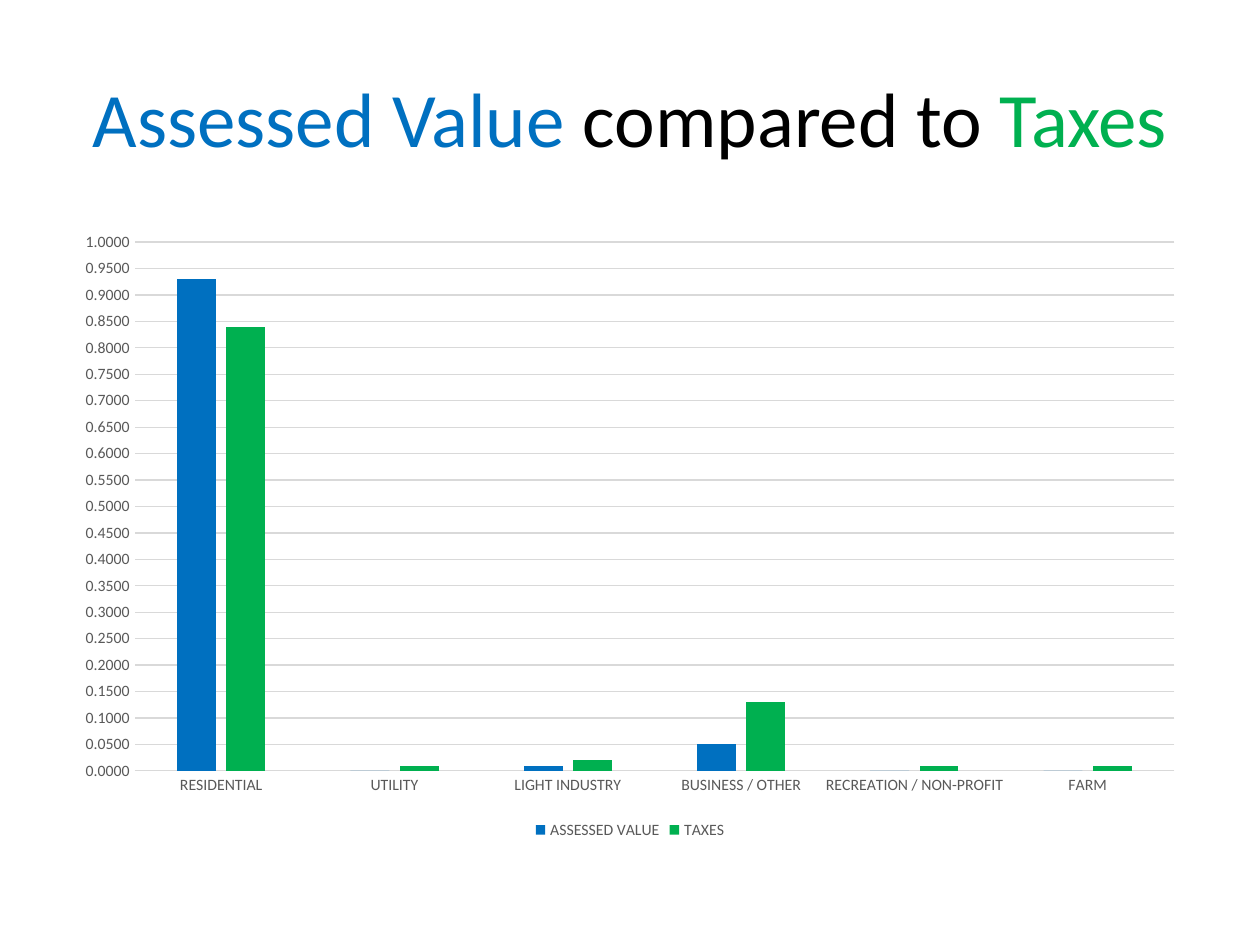
from dataclasses import dataclass

from pptx import Presentation
from pptx.chart.data import CategoryChartData
from pptx.dml.color import RGBColor
from pptx.enum.chart import XL_CHART_TYPE, XL_LEGEND_POSITION, XL_TICK_MARK
from pptx.enum.text import MSO_ANCHOR, PP_ALIGN
from pptx.util import Inches, Pt


@dataclass(frozen=True)
class Theme:
    font: str = "Calibri"
    value: RGBColor = RGBColor(0x00, 0x70, 0xC0)
    taxes: RGBColor = RGBColor(0x00, 0xB0, 0x50)
    text: RGBColor = RGBColor(0x00, 0x00, 0x00)
    label: RGBColor = RGBColor(0x59, 0x59, 0x59)
    grid: RGBColor = RGBColor(0xD9, 0xD9, 0xD9)
    title_size: Pt = Pt(44)
    chart_size: Pt = Pt(10)
    label_size: Pt = Pt(9)
    rule: Pt = Pt(0.75)


THEME = Theme()
WIDTH, HEIGHT = Inches(10), Inches(7.5)

TITLE_BOX = (0.05, 0.04, 0.9, 1 / 6)
CHART_BOX = (0.05, 7 / 30, 0.9, 0.66)

TITLE = [
    ("Assessed Value ", THEME.value),
    ("compared to ", THEME.text),
    ("Taxes", THEME.taxes),
]
CATEGORIES = [
    "RESIDENTIAL",
    "UTILITY",
    "LIGHT INDUSTRY",
    "BUSINESS / OTHER",
    "RECREATION / NON-PROFIT",
    "FARM",
]
SERIES = [
    ("ASSESSED VALUE", (0.93, 0, 0.01, 0.05, 0, 0), THEME.value),
    ("TAXES", (0.84, 0.01, 0.02, 0.13, 0.01, 0.01), THEME.taxes),
]


def place(box):
    x, y, w, h = box
    return round(x * WIDTH), round(y * HEIGHT), round(w * WIDTH), round(h * HEIGHT)


def style_font(font, size, color):
    font.name = THEME.font
    font.size = size
    font.color.rgb = color


def style_line(line):
    line.color.rgb = THEME.grid
    line.width = THEME.rule


def add_title(s, box):
    sp = s.shapes.title
    sp.left, sp.top, sp.width, sp.height = place(box)
    tf = sp.text_frame
    tf.word_wrap = True
    tf.vertical_anchor = MSO_ANCHOR.MIDDLE
    p = tf.paragraphs[0]
    p.alignment = PP_ALIGN.CENTER
    p.font.name = THEME.font
    p.font.size = THEME.title_size
    for text, color in TITLE:
        r = p.add_run()
        r.text = text
        r.font.color.rgb = color


def add_comparison_chart(s, box):
    data = CategoryChartData(number_format="#,##0.0000")
    data.categories = CATEGORIES
    for name, values, _ in SERIES:
        data.add_series(name, values)
    chart = s.shapes.add_chart(
        XL_CHART_TYPE.COLUMN_CLUSTERED, *place(box), data
    ).chart
    style_font(chart.font, THEME.chart_size, THEME.text)
    chart.has_title = False

    chart.has_legend = True
    chart.legend.position = XL_LEGEND_POSITION.BOTTOM
    chart.legend.include_in_layout = False
    style_font(chart.legend.font, THEME.label_size, THEME.label)

    for axis in (chart.category_axis, chart.value_axis):
        axis.major_tick_mark = XL_TICK_MARK.NONE
        axis.minor_tick_mark = XL_TICK_MARK.NONE
        style_font(axis.tick_labels.font, THEME.label_size, THEME.label)
    style_line(chart.category_axis.format.line)

    axis = chart.value_axis
    axis.minimum_scale, axis.maximum_scale, axis.major_unit = 0, 1, 0.05
    axis.tick_labels.number_format = "#,##0.0000"
    axis.tick_labels.number_format_is_linked = False
    axis.format.line.fill.background()
    style_line(axis.major_gridlines.format.line)

    plot = chart.plots[0]
    plot.gap_width, plot.overlap = 219, -27
    plot.vary_by_categories = False
    for series, (_, _, color) in zip(plot.series, SERIES):
        series.invert_if_negative = False
        series.format.fill.solid()
        series.format.fill.fore_color.rgb = color


def main():
    prs = Presentation()
    prs.slide_width, prs.slide_height = WIDTH, HEIGHT
    s = prs.slides.add_slide(prs.slide_layouts.get_by_name("Title Only"))
    add_title(s, TITLE_BOX)
    add_comparison_chart(s, CHART_BOX)
    prs.save("out.pptx")


if __name__ == "__main__":
    main()
